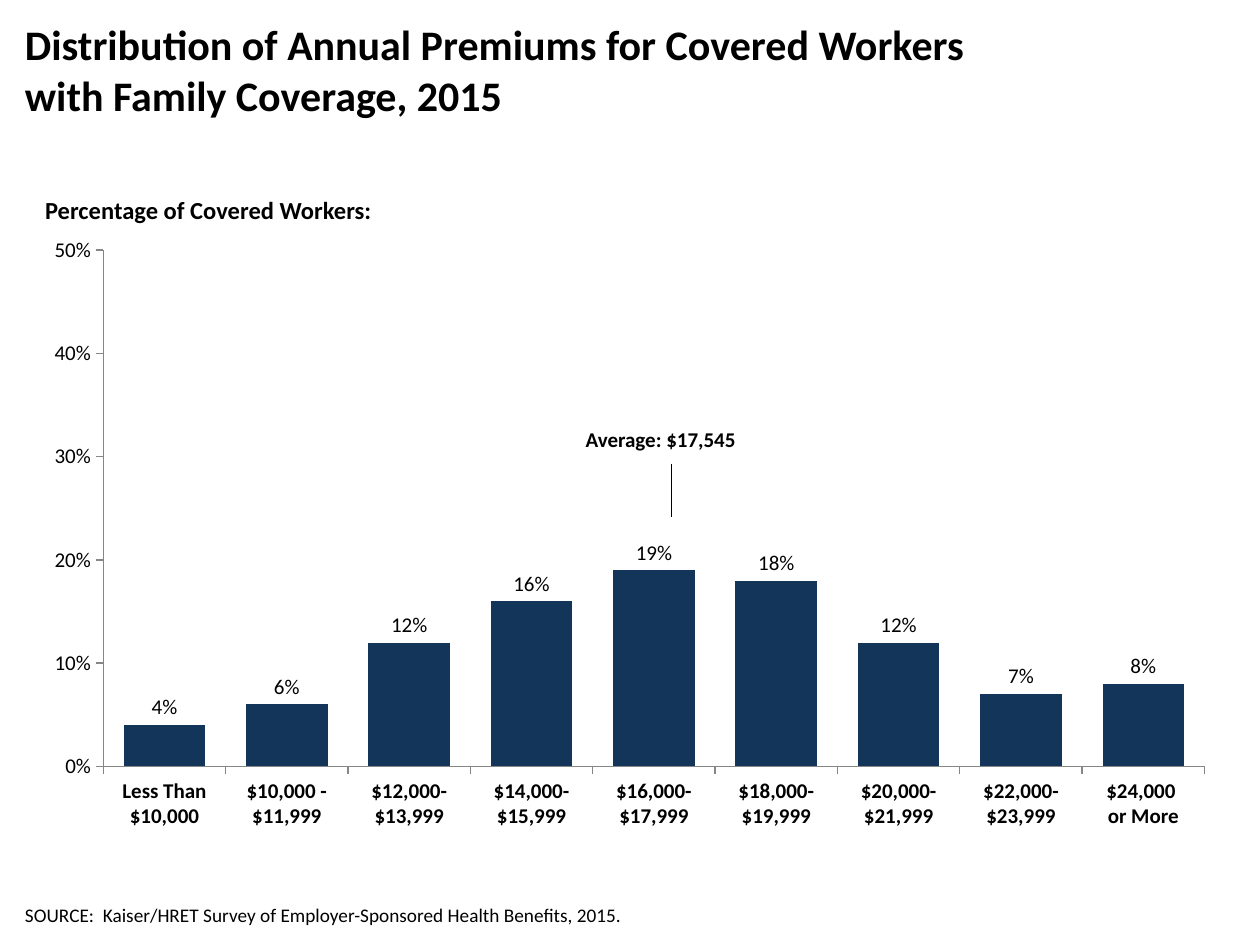
"""Build a slide charting the distribution of annual family premiums."""
from lxml.etree import SubElement
from pptx import Presentation
from pptx.chart.data import CategoryChartData
from pptx.dml.color import RGBColor
from pptx.enum.chart import XL_CHART_TYPE, XL_LABEL_POSITION, XL_TICK_MARK
from pptx.enum.shapes import MSO_CONNECTOR
from pptx.enum.text import MSO_ANCHOR
from pptx.oxml.ns import qn
from pptx.util import Inches, Pt

FONT = "Calibri"
BLACK, NAVY, GRAY = "000000", "133559", "868686"
PREMIUMS = [
    ("Less Than $10,000", 0.04),
    ("$10,000 -\n$11,999", 0.06),
    ("$12,000-$13,999", 0.12),
    ("$14,000-$15,999", 0.16),
    ("$16,000-$17,999", 0.19),
    ("$18,000-$19,999", 0.18),
    ("$20,000-$21,999", 0.12),
    ("$22,000-$23,999", 0.07),
    ("$24,000 \nor More", 0.08),
]
CHART_FRAME = (0.25, 1.79, 9.5, 4.88)
PLOT_LAYOUT = {"x": 0.06, "y": 0.04, "w": 0.92, "h": 0.84}
TEXTS = [
    (["Distribution of Annual Premiums for Covered Workers ",
      "with Family Coverage, 2015"],
     (0.1, 0.1, 9.8, 1.32), 24, True, MSO_ANCHOR.TOP, True),
    (["SOURCE:  Kaiser/HRET Survey of Employer-Sponsored Health Benefits, 2015."],
     (0.1, 6.8, 9.1, 0.6), 11, False, MSO_ANCHOR.BOTTOM, True),
    (["Average: $17,545"],
     (4.55, 3.34, 1.57, 0.3), 12, True, MSO_ANCHOR.TOP, True),
    (["Percentage of Covered Workers:"],
     (0.26, 1.5, 2.9, 0.34), 14, True, MSO_ANCHOR.TOP, False),
]
AVERAGE_LINE = (5.33, 3.68, 5.33, 4.1)


def color(value):
    return RGBColor.from_string(value)


def style_font(font, size, bold=False):
    font.name = FONT
    font.size = Pt(size)
    font.bold = bold
    font.color.rgb = color(BLACK)


def add_text(page, lines, frame, size, bold, anchor, wrap):
    box = page.shapes.add_textbox(*map(Inches, frame))
    box.text_frame.word_wrap = wrap
    box.text_frame.vertical_anchor = anchor
    para = box.text_frame.paragraphs[0]
    for index, line in enumerate(lines):
        if index:
            para.add_line_break()
        span = para.add_run()
        span.text = line
        style_font(span.font, size, bold)


def style_axis(axis, bold):
    axis.has_major_gridlines = False
    axis.major_tick_mark = XL_TICK_MARK.OUTSIDE
    axis.minor_tick_mark = XL_TICK_MARK.NONE
    axis.format.line.color.rgb = color(GRAY)
    axis.format.line.width = Pt(0.75)
    style_font(axis.tick_labels.font, 12, bold)


def set_plot_layout(chart):
    plot_area = chart.plots[0]._element.getparent()
    for old in plot_area.findall(qn("c:layout")):
        plot_area.remove(old)
    layout = SubElement(plot_area, qn("c:layout"))
    plot_area.insert(0, layout)
    manual = SubElement(layout, qn("c:manualLayout"))
    settings = {"layoutTarget": "inner", "xMode": "edge", "yMode": "edge", **PLOT_LAYOUT}
    for name, value in settings.items():
        SubElement(manual, qn(f"c:{name}")).set("val", str(value))


def add_premium_chart(page):
    data = CategoryChartData(number_format="0%")
    data.categories = [label for label, share in PREMIUMS]
    data.add_series("Series 1", [share for label, share in PREMIUMS])
    chart = page.shapes.add_chart(
        XL_CHART_TYPE.COLUMN_CLUSTERED, *map(Inches, CHART_FRAME), data).chart
    chart.has_legend = False
    chart.has_title = False
    style_font(chart.font, 18)
    style_axis(chart.category_axis, True)
    values = chart.value_axis
    style_axis(values, False)
    values.minimum_scale, values.maximum_scale, values.major_unit = 0, 0.5, 0.1
    values.tick_labels.number_format = "0%"
    values.tick_labels.number_format_is_linked = False

    plot = chart.plots[0]
    plot.gap_width, plot.overlap = 50, -1
    plot.vary_by_categories = False
    bars = plot.series[0]
    bars.format.fill.solid()
    bars.format.fill.fore_color.rgb = color(NAVY)
    labels = bars.data_labels
    labels.show_value = True
    labels.number_format = "0%"
    labels.number_format_is_linked = False
    labels.position = XL_LABEL_POSITION.OUTSIDE_END
    style_font(labels.font, 12)
    set_plot_layout(chart)


def add_average_line(page):
    line = page.shapes.add_connector(MSO_CONNECTOR.STRAIGHT, *map(Inches, AVERAGE_LINE))
    line.line.color.rgb = color(BLACK)
    line.line.width = Pt(0.75)
    SubElement(line._element.spPr, qn("a:effectLst"))


def main():
    deck = Presentation()
    deck.slide_width, deck.slide_height = Inches(10), Inches(7.5)
    page = deck.slides.add_slide(deck.slide_layouts[6])
    add_premium_chart(page)
    add_average_line(page)
    for text in TEXTS:
        add_text(page, *text)
    deck.save("out.pptx")


if __name__ == "__main__":
    main()
